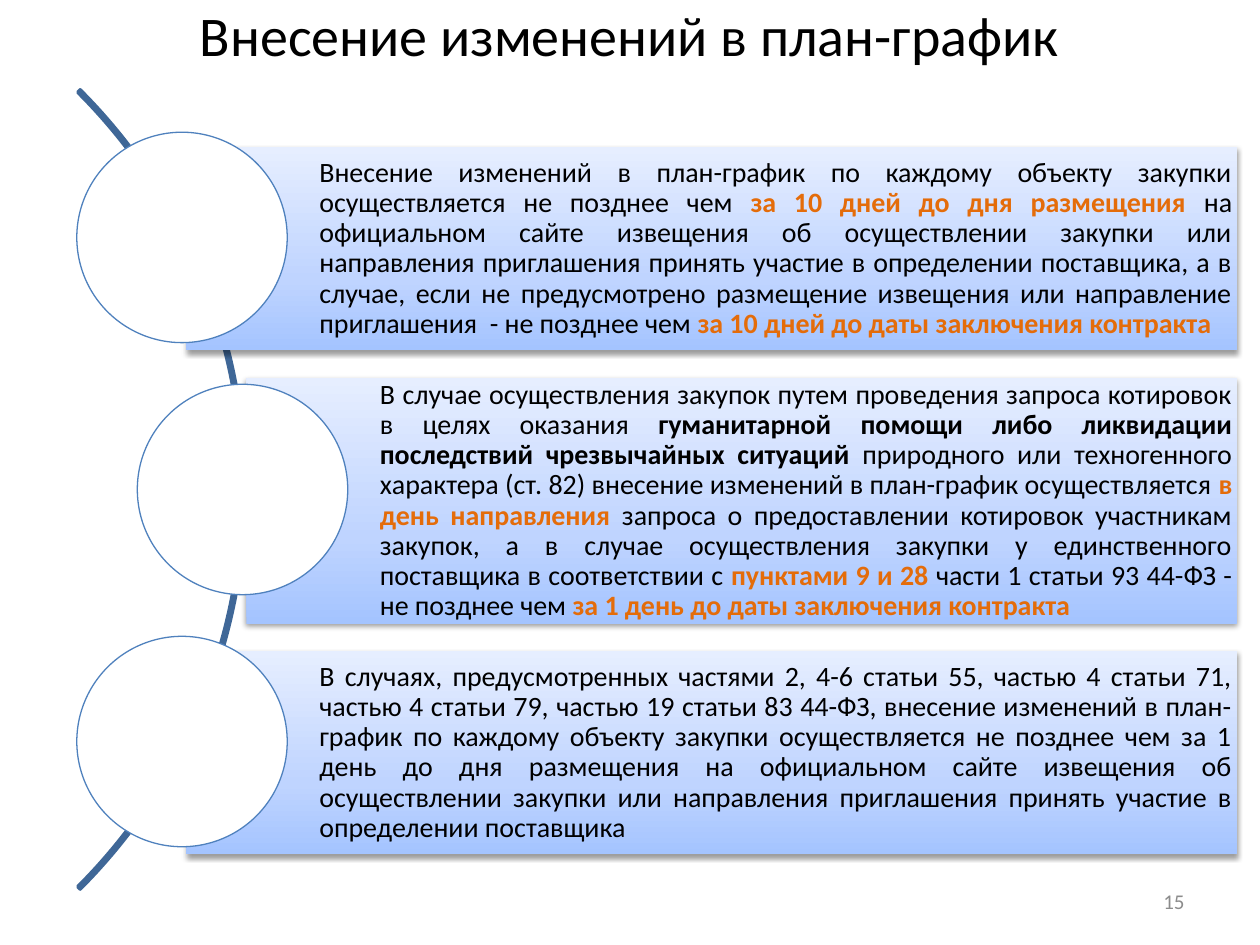
from dataclasses import dataclass

from lxml import etree
from pptx import Presentation, util as u
from pptx.dml.color import RGBColor
from pptx.enum import shapes, text
from pptx.oxml import ns

# The slide is a grid of 100 columns by 100 rows
WIDTH, HEIGHT = u.Inches(10), u.Inches(7.5)
COL, ROW = WIDTH / 100, HEIGHT / 100

COLOURS = {
    "black": "000000", "white": "FFFFFF", "orange": "E46C0A", "grey": "8C8C8C",
    "arc": "3F6797", "ring": "4F81BD",
    "panel_low": "A4C4FF", "panel_mid": "BFD4FF", "panel_top": "E6EEFF",
}
FONT = "Calibri"

# Common rhythm of the three steps
MIDDLE_ROW, STEP_ROWS = 51.8, 26.67
CIRCLE_COLS = 16.7
PANEL_RIGHT, PANEL_SHIFT_COLS, PANEL_SHIFT_ROWS = 98.2, 0.3, 1.2
ARC_CENTRE_COL, ARC_COLS = -25.35, 89.7


@dataclass(frozen=True)
class Span:
    words: str
    colour: str = "black"
    bold: bool = False


@dataclass(frozen=True)
class Step:
    centre_col: float
    panel_rows: float
    spans: tuple[Span, ...]


STEPS = (
    Step(14.45, 21.47, (
        Span("Внесение изменений в план-график по каждому объекту закупки "
             "осуществляется не позднее чем "),
        Span("за 10 дней до дня размещения ", "orange", True),
        Span("на официальном сайте извещения об осуществлении закупки или "
             "направления приглашения принять участие в определении поставщика, "
             "а в случае, если не предусмотрено размещение извещения или "
             "направление приглашения  - не позднее чем "),
        Span("за 10 дней до даты заключения контракта", "orange", True),
    )),
    Step(19.25, 26, (
        Span("В случае осуществления закупок путем проведения запроса котировок "
             "в целях оказания "),
        Span("гуманитарной помощи либо ликвидации последствий чрезвычайных "
             "ситуаций ", bold=True),
        Span("природного или техногенного характера (ст. 82) внесение изменений "
             "в план-график осуществляется "),
        Span("в день направления ", "orange", True),
        Span("запроса о предоставлении котировок участникам закупок, а в случае "
             "осуществления закупки у единственного поставщика в соответствии с "),
        Span("пунктами 9 и 28 ", "orange", True),
        Span("части 1 статьи 93 44-ФЗ - не позднее чем "),
        Span("за 1 день до даты заключения контракта", "orange", True),
    )),
    Step(14.45, 21.47, (
        Span("В случаях, предусмотренных частями 2, 4-6 статьи 55, частью 4 "
             "статьи 71, частью 4 статьи 79, частью 19 статьи 83 44-ФЗ, внесение "
             "изменений в план-график по каждому объекту закупки осуществляется "
             "не позднее чем за 1 день до дня размещения на официальном сайте "
             "извещения об осуществлении закупки или направления приглашения "
             "принять участие в определении поставщика"),
    )),
)


def rgb(name: str) -> RGBColor:
    return RGBColor.from_string(COLOURS[name])


def place(col: float, row: float, cols: float, rows: float) -> tuple[int, ...]:
    return tuple(round(n) for n in (col * COL, row * ROW, cols * COL, rows * ROW))


def add_plain_shape(page, kind, area, line=None, weight=0):
    """Add a preset shape without shadow, outlined only when a line is named."""
    shape = page.shapes.add_shape(kind, *area)
    shape.shadow.inherit = False
    if line:
        shape.line.color.rgb = rgb(line)
        shape.line.width = u.Pt(weight)
    else:
        shape.line.fill.background()
    return shape


def write(box, spans, size, align, frame_format=None, para_format=None) -> None:
    frame = box.text_frame
    frame_values = {"word_wrap": True, "vertical_anchor": text.MSO_ANCHOR.MIDDLE}
    for name, value in (frame_values | (frame_format or {})).items():
        setattr(frame, name, value)
    para = frame.paragraphs[0]
    for name, value in ({"alignment": align} | (para_format or {})).items():
        setattr(para, name, value)
    for span in spans:
        run = para.add_run()
        run.text = span.words
        run.font.color.rgb = rgb(span.colour)
        font_values = {"name": FONT, "size": u.Pt(size), "bold": span.bold}
        for name, value in font_values.items():
            setattr(run.font, name, value)


def shade_panel(panel) -> None:
    """Three-stop upward gradient and a soft shadow below."""
    panel.fill.gradient()
    panel.fill.gradient_angle = 90
    stops = panel.fill._fill._gradFill.find(ns.qn("a:gsLst"))
    for stop in list(stops):
        stops.remove(stop)
    for share, name in ((0, "panel_low"), (35, "panel_mid"), (100, "panel_top")):
        stop = etree.SubElement(stops, ns.qn("a:gs"), pos=str(share * 1000))
        etree.SubElement(stop, ns.qn("a:srgbClr"), val=COLOURS[name])
    effects = panel._element.spPr.find(ns.qn("a:effectLst"))
    shadow = etree.SubElement(
        effects, ns.qn("a:outerShdw"), blurRad=str(u.Pt(3.1)),
        dist=str(u.Pt(1.6)), dir="5400000", rotWithShape="0")
    tint = etree.SubElement(shadow, ns.qn("a:srgbClr"), val=COLOURS["black"])
    etree.SubElement(tint, ns.qn("a:alpha"), val="38000")


def add_arc(page) -> None:
    rows = ARC_COLS * COL / ROW
    area = place(ARC_CENTRE_COL - ARC_COLS / 2, MIDDLE_ROW - rows / 2, ARC_COLS, rows)
    arc = add_plain_shape(page, shapes.MSO_SHAPE.BLOCK_ARC, area, "arc", 2)
    arc.fill.background()
    for index, value in enumerate((189, 27, 0.003)):
        arc.adjustments[index] = value


def add_step(page, step: Step, centre_row: float) -> None:
    # Panel with the wording
    left = step.centre_col + PANEL_SHIFT_COLS
    top = centre_row + PANEL_SHIFT_ROWS - step.panel_rows / 2
    panel = add_plain_shape(
        page, shapes.MSO_SHAPE.RECTANGLE,
        place(left, top, PANEL_RIGHT - left, step.panel_rows))
    shade_panel(panel)
    margins = {f"margin_{side}": u.Inches(0.04) for side in ("top", "right", "bottom")}
    write(panel, step.spans, 16, text.PP_ALIGN.JUSTIFY,
          margins | {"margin_left": u.Inches(1.06)},
          {"line_spacing": 0.9, "space_after": u.Pt(5.6)})

    # Circle over the panel's left edge
    rows = CIRCLE_COLS * COL / ROW
    circle = add_plain_shape(
        page, shapes.MSO_SHAPE.OVAL,
        place(step.centre_col - CIRCLE_COLS / 2, centre_row - rows / 2,
              CIRCLE_COLS, rows), "ring", 0.75)
    circle.fill.solid()
    circle.fill.fore_color.rgb = rgb("white")


def main() -> None:
    deck = Presentation()
    deck.slide_width, deck.slide_height = WIDTH, HEIGHT
    page = deck.slides.add_slide(deck.slide_layouts[6])

    # Title
    title = page.shapes.add_textbox(*place(5, 0, 90, 7.33))
    write(title, [Span("Внесение изменений в план-график")], 32, text.PP_ALIGN.CENTER)

    # Arc and the steps along it
    add_arc(page)
    for index, step in enumerate(STEPS):
        add_step(page, step, MIDDLE_ROW + (index - 1) * STEP_ROWS)

    # Page number
    number = page.shapes.add_textbox(*place(71.7, 92.67, 23.3, 5.33))
    write(number, [Span("15", "grey")], 12, text.PP_ALIGN.RIGHT)

    deck.save("out.pptx")


if __name__ == "__main__":
    main()
